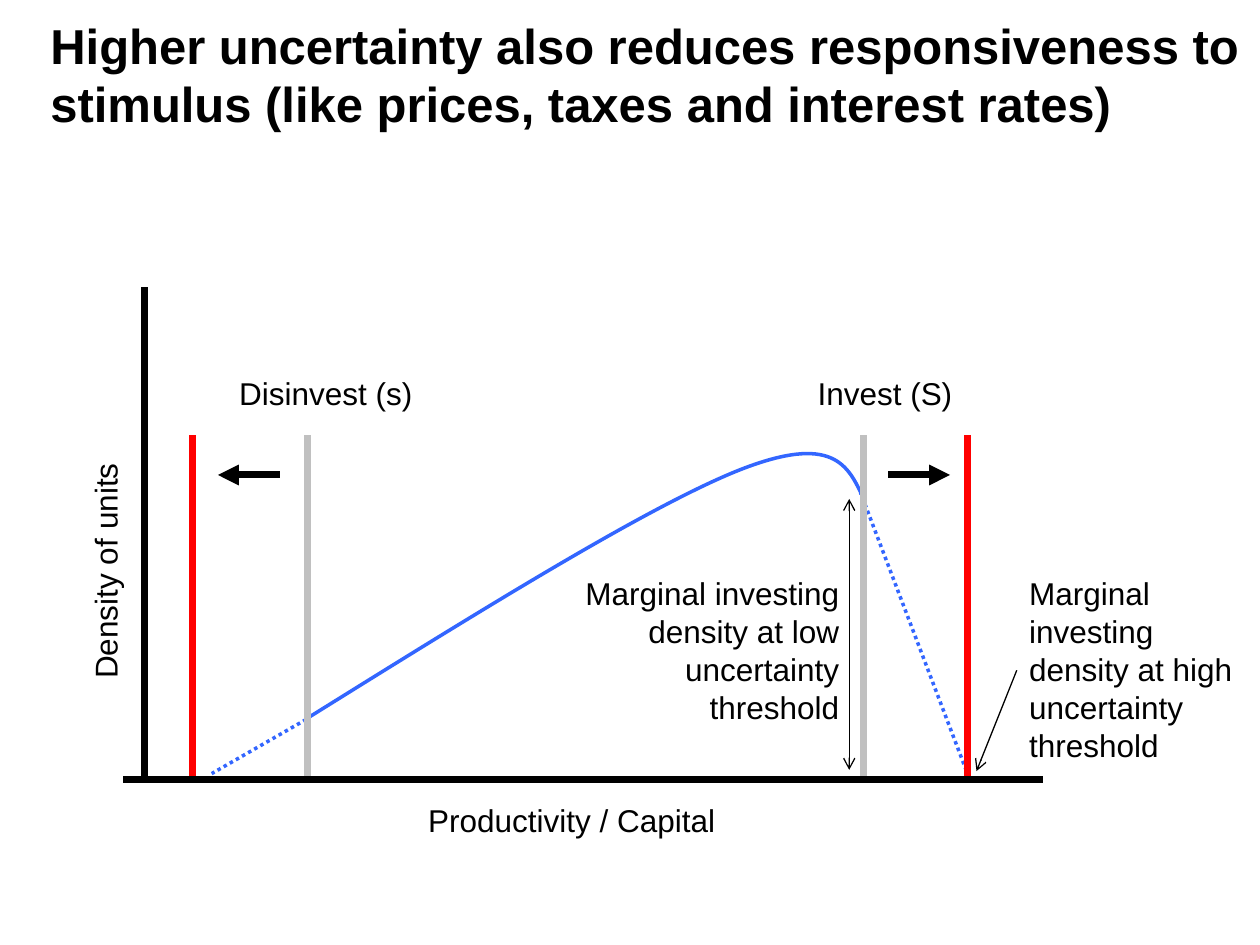
from dataclasses import dataclass

from lxml.etree import SubElement
from pptx import Presentation
from pptx.dml.color import RGBColor
from pptx.enum.dml import MSO_LINE_DASH_STYLE as Dash
from pptx.enum.shapes import MSO_CONNECTOR as Connector
from pptx.enum.text import MSO_ANCHOR as Anchor, MSO_AUTO_SIZE as AutoSize, PP_ALIGN as Align
from pptx.oxml.ns import qn
from pptx.util import Inches, Pt

COLORS = {"ink": "000000", "curve": "3366FF", "low": "C0C0C0", "high": "FF0000"}
FONT = "Arial"


@dataclass
class Box:
    left: float
    top: float
    width: float
    height: float

    def point(self, x, y):
        """Turn inches from the box corner into a slide position."""
        return Inches(self.left + x), Inches(self.top + y)


def color(name):
    return RGBColor.from_string(COLORS[name])


def write(frame, text, size=18, bold=False, align=Align.LEFT, anchor=Anchor.TOP):
    frame.word_wrap = True
    frame.auto_size = AutoSize.NONE
    frame.vertical_anchor = anchor
    para = frame.paragraphs[0]
    para.alignment = align
    span = para.add_run()
    span.text = text
    span.font.name = FONT
    span.font.size = Pt(size)
    span.font.bold = bold
    span.font.color.rgb = color("ink")


def add_label(page, box, text, x, y, width, height=0.4, rotation=0, **form):
    label = page.shapes.add_textbox(*box.point(x, y), Inches(width), Inches(height))
    label.rotation = rotation
    write(label.text_frame, text, **form)


def add_line(page, box, start, end, ink="ink", width=4, dash=None, head=None, tail=None):
    line = page.shapes.add_connector(
        Connector.STRAIGHT, *box.point(*start), *box.point(*end))
    line.line.color.rgb = color(ink)
    line.line.width = Pt(width)
    if dash:
        line.line.dash_style = dash
    outline = line.line._get_or_add_ln()
    for tag, kind in (("a:headEnd", head), ("a:tailEnd", tail)):
        if kind:
            SubElement(outline, qn(tag), type=kind)
    SubElement(line._element.spPr, qn("a:effectLst"))


def add_curve(page, box, points, ink, width):
    """Draw cubic Bézier segments: a start, then three points for each segment."""
    places = [box.point(*point) for point in points]
    builder = page.shapes.build_freeform(*places[0])
    builder.add_line_segments(places[1:], close=False)
    curve = builder.convert_to_shape()
    curve.shadow.inherit = False
    curve.fill.background()
    curve.line.color.rgb = color(ink)
    curve.line.width = Pt(width)
    outline = curve._element.find(".//" + qn("a:path"))
    steps = outline.findall(qn("a:lnTo"))
    for first in range(0, len(steps), 3):
        segment = SubElement(outline, qn("a:cubicBezTo"))
        for step in steps[first:first + 3]:
            segment.append(step[0])
            outline.remove(step)


def add_title(page, box, text):
    title = page.shapes.title
    title.left, title.top = box.point(0, 0)
    title.width, title.height = Inches(box.width), Inches(box.height)
    write(title.text_frame, text, size=28, bold=True)


def add_density(page, box):
    """Draw the density curve, dotted beyond the low uncertainty thresholds."""
    for start, end in (((1.45, 3.43), (0.7, 3.86)), ((6.71, 3.89), (5.85, 1.63))):
        add_line(page, box, start, end, "curve", 2, dash=Dash.ROUND_DOT)
    add_curve(page, box, [(1.46, 3.42), (2.81, 2.58), (4.16, 1.74), (4.89, 1.45),
                          (5.63, 1.16), (5.75, 1.41), (5.87, 1.67)], "curve", 2)


def add_thresholds(page, box):
    for x, ink in ((0.55, "high"), (6.7, "high"), (1.46, "low"), (5.87, "low")):
        add_line(page, box, (x, box.height), (x, 1.17), ink)
    add_line(page, box, (0.75, 1.49), (1.24, 1.49), head="triangle")
    add_line(page, box, (6.07, 1.49), (6.56, 1.49), tail="triangle")
    add_label(page, box, "Disinvest (s)", 0.82, 0.64, 2.5)
    add_label(page, box, "Invest (S)", 5.41, 0.64, 1.31)


def add_axes(page, box):
    add_line(page, box, (0.17, box.height), (0.17, 0))
    add_line(page, box, (0, box.height), (box.width, box.height))
    add_label(page, box, "Productivity / Capital", 2.32, box.height + 0.12, 2.74)
    add_label(page, box, "Density of units", -1.23, 1.92, 2.17, rotation=270)


def add_notes_on_density(page, box):
    add_label(page, box, "Marginal investing density at high uncertainty threshold",
              7.09, 2.23, 2.04, 1.62)
    add_line(page, box, (7.09, 3.04), (6.77, 3.84), width=0.75, tail="arrow")
    add_label(page, box, "Marginal investing density at low uncertainty threshold",
              3.38, 2.23, 2.4, 1.31, align=Align.RIGHT)
    add_line(page, box, (5.76, 1.68), (5.76, 3.83), width=0.75, head="arrow", tail="arrow")


def main():
    deck = Presentation()
    deck.slide_width, deck.slide_height = Inches(10), Inches(7.5)
    page = deck.slides.add_slide(deck.slide_layouts[5])
    add_title(page, Box(0.3, 0.07, 10, 0.78),
              "Higher uncertainty also reduces responsiveness to stimulus "
              "(like prices, taxes and interest rates)")
    plot = Box(0.98, 2.28, 7.3, 3.91)
    for add_part in (add_density, add_thresholds, add_axes, add_notes_on_density):
        add_part(page, plot)
    deck.save("out.pptx")


if __name__ == "__main__":
    main()
